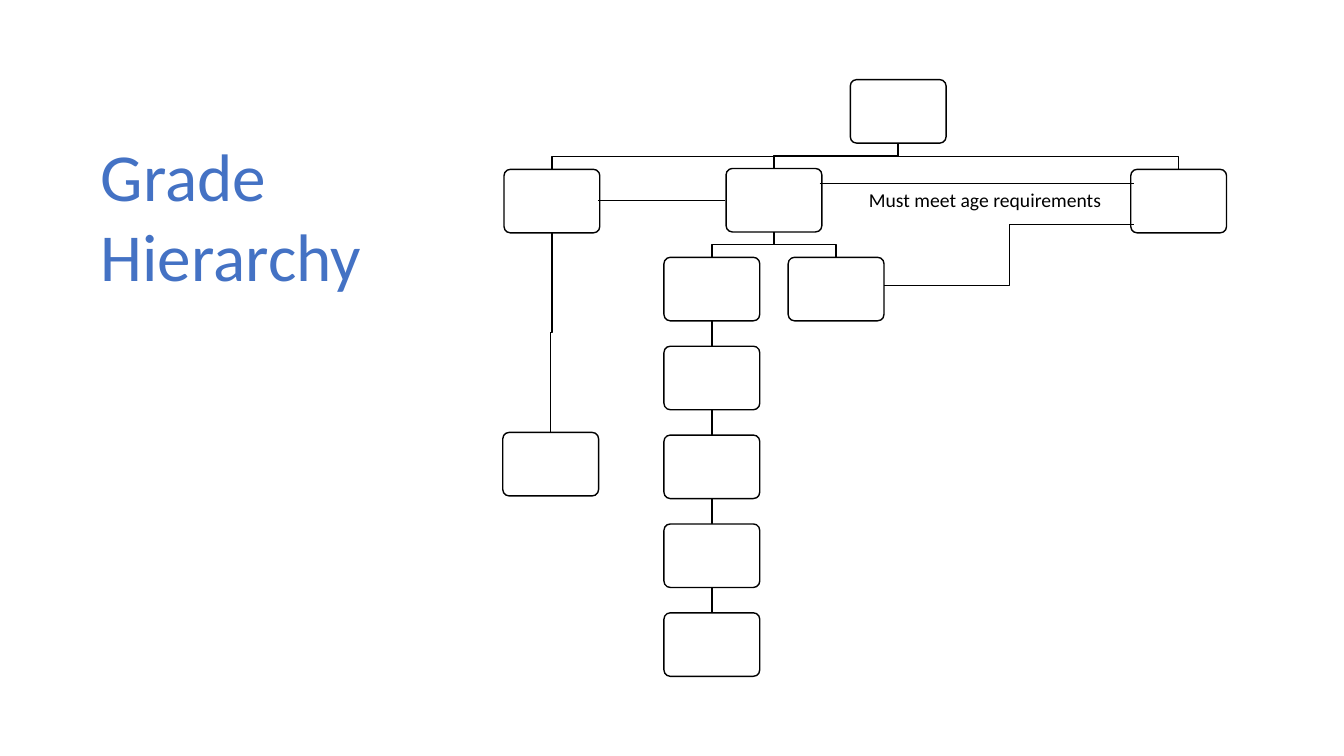
"""Build the Grade Hierarchy slide: an organisation tree with a title and a side note."""
import pptx
import pptx.dml.color
import pptx.enum.shapes
import pptx.oxml
import pptx.util

Inches = pptx.util.Inches
Points = pptx.util.Pt
Color = pptx.dml.color.RGBColor.from_string
Connector = pptx.enum.shapes.MSO_CONNECTOR

THEME = {
    "font": "Calibri",
    "title_color": "4472C4",
    "title_size": 48,
    "ink": "000000",
    "note_size": 14,
    "box_fill": "FFFFFF",
    "tree_line": 1,
    "link_line": 0.5,
}

BOX_WIDTH, BOX_HEIGHT = Inches(0.95), Inches(0.63)
FIRST_CENTER, COLUMN_PITCH = Inches(7.06), Inches(0.61)
FIRST_TOP, ROW_PITCH = Inches(0.79), Inches(5.29) / 6

BOXES = {
    "root": (3.03, 0),
    "left": (-2.6, 1.01),
    "middle": (1.01, 1),
    "right": (7.59, 1.01),
    "left leaf": (-2.62, 3.97),
    "stack 1": (0, 2),
    "stack 2": (0, 3),
    "stack 3": (0, 4),
    "stack 4": (0, 5),
    "stack 5": (0, 6),
    "side": (2.02, 2),
}
BRANCHES = [
    ("root", "middle"),
    ("root", "right"),
    ("root", "left"),
    ("middle", "stack 1"),
    ("middle", "side"),
    ("left", "left leaf"),
    *((f"stack {step}", f"stack {step + 1}") for step in range(1, 5)),
]
TEXTS = [
    ("Must meet age requirements", (8.52, 1.82, 2.74, 0.34), "note_size", "ink"),
    ("Grade Hierarchy", (0.9, 1.28, 3.71, 1.72), "title_size", "title_color"),
]

presentation = pptx.Presentation()
presentation.slide_width = Inches(13.33)
presentation.slide_height = Inches(7.5)
slide = presentation.slides.add_slide(presentation.slide_layouts[6])


def draw_connector(kind, start, end, width):
    """Draw a connector without a shadow between two points."""
    connector = slide.shapes.add_connector(kind, *start, *end)
    connector.line.color.rgb = Color(THEME["ink"])
    connector.line.width = Points(width)
    connector._element.spPr.append(pptx.oxml.parse_xml(
        '<a:effectLst xmlns:a="http://schemas.openxmlformats.org/drawingml/2006/main"/>'))


places = {
    name: (round(FIRST_CENTER + column * COLUMN_PITCH), round(FIRST_TOP + row * ROW_PITCH))
    for name, (column, row) in BOXES.items()
}

for parent, child in BRANCHES:
    parent_x, parent_top = places[parent]
    child_x, child_top = places[child]
    start_y = parent_top + BOX_HEIGHT
    if parent_x == child_x:
        draw_connector(Connector.STRAIGHT, (parent_x, start_y), (child_x, child_top), THEME["tree_line"])
        continue
    bend_y = (start_y + child_top) // 2
    builder = slide.shapes.build_freeform(parent_x, start_y, scale=1)
    builder.add_line_segments([(parent_x, bend_y), (child_x, bend_y), (child_x, child_top)], close=False)
    branch = builder.convert_to_shape()
    branch.shadow.inherit = False
    branch.fill.background()
    branch.line.color.rgb = Color(THEME["ink"])
    branch.line.width = Points(THEME["tree_line"])

for center, top in places.values():
    box = slide.shapes.add_shape(
        pptx.enum.shapes.MSO_SHAPE.ROUNDED_RECTANGLE,
        center - BOX_WIDTH // 2, top, BOX_WIDTH, BOX_HEIGHT)
    box.adjustments[0] = 0.1
    box.shadow.inherit = False
    box.fill.solid()
    box.fill.fore_color.rgb = Color(THEME["box_fill"])
    box.line.color.rgb = Color(THEME["ink"])
    box.line.width = Points(THEME["tree_line"])

for kind, start, end, width in [
    (Connector.ELBOW, (8.77, 2.83), (11.25, 2.23), "link_line"),
    (Connector.STRAIGHT, (5.93, 1.99), (7.19, 1.99), "tree_line"),
    (Connector.STRAIGHT, (8.13, 1.82), (11.25, 1.82), "link_line"),
]:
    draw_connector(kind, map(Inches, start), map(Inches, end), THEME[width])

for text, place, size, color in TEXTS:
    text_box = slide.shapes.add_textbox(*map(Inches, place))
    text_box.text_frame.word_wrap = True
    paragraph = text_box.text_frame.paragraphs[0]
    paragraph.text = text
    paragraph.font.name = THEME["font"]
    paragraph.font.size = Points(THEME[size])
    paragraph.font.color.rgb = Color(THEME[color])

presentation.save("out.pptx")
